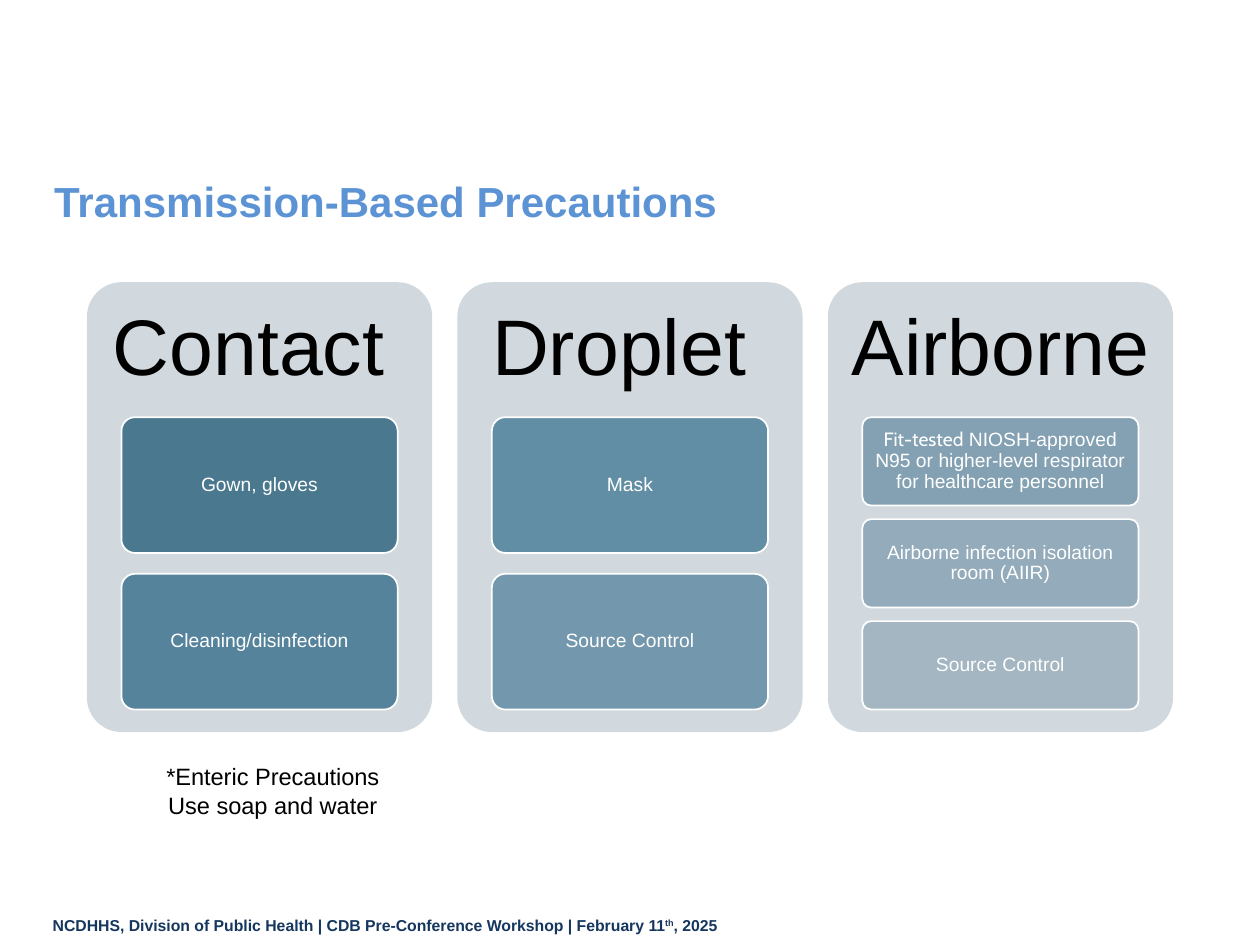
from dataclasses import dataclass

from pptx import Presentation
from pptx import util as u
from pptx.dml import color
from pptx.enum import shapes, text


@dataclass(frozen=True)
class Theme:
    font: str = "Arial"
    accent_font: str = "Cabin"
    title: str = "5C93D5"
    footer: str = "15365E"
    panel: str = "D1D9DE"
    dark: str = "000000"
    light: str = "FFFFFF"
    title_size: float = 24
    heading_size: float = 45
    card_size: float = 11
    note_size: float = 13.5
    footer_size: float = 9


THEME = Theme()

# Each column: heading, then cards as (fill, runs); a run is text or (text, format).
COLUMNS = [
    ("Contact ", [("4A788E", ["Gown, gloves"]),
                  ("55839B", ["Cleaning/disinfection"])]),
    ("Droplet ", [("628EA5", ["Mask"]),
                  ("7397AC", ["Source Control"])]),
    ("Airborne", [
        ("83A1B2", [("Fit-tested", {"font": THEME.accent_font}),
                    " NIOSH-approved N95 or higher-level respirator for healthcare personnel"]),
        ("93ABBA", ["Airborne infection isolation room (AIIR)"]),
        ("A3B6C1", ["Source Control"])]),
]


def rgb(value):
    return color.RGBColor.from_string(value)


def write_text(shape, paragraphs, *, size, ink, bold=False, align=text.PP_ALIGN.CENTER,
               anchor=text.MSO_ANCHOR.MIDDLE, spacing=None, insets=(0.1, 0.05)):
    """Fill a shape with paragraphs, each a list of runs."""
    frame = shape.text_frame
    frame.word_wrap = True
    frame.auto_size = text.MSO_AUTO_SIZE.NONE
    frame.vertical_anchor = anchor
    frame.margin_left = frame.margin_right = u.Inches(insets[0])
    frame.margin_top = frame.margin_bottom = u.Inches(insets[1])
    for index, runs in enumerate(paragraphs):
        paragraph = frame.add_paragraph() if index else frame.paragraphs[0]
        paragraph.alignment = align
        if spacing:
            paragraph.line_spacing = spacing
        for item in runs:
            words, style = (item, {}) if isinstance(item, str) else item
            run = paragraph.add_run()
            run.text = words
            run.font.name = style.get("font", THEME.font)
            run.font.size = u.Pt(size)
            run.font.bold = bold
            run.font.color.rgb = rgb(ink)
            if "baseline" in style:
                run.font._element.set("baseline", str(style["baseline"]))


def add_text_box(slide, box, paragraphs, **style):
    shape = slide.shapes.add_textbox(*map(u.Inches, box))
    write_text(shape, paragraphs, **style)


def add_rounded_box(slide, box, fill, line=None):
    shape = slide.shapes.add_shape(shapes.MSO_SHAPE.ROUNDED_RECTANGLE, *map(u.Inches, box))
    shape.adjustments[0] = 0.1
    shape.shadow.inherit = False
    shape.fill.solid()
    shape.fill.fore_color.rgb = rgb(fill)
    if line:
        shape.line.color.rgb = rgb(line)
        shape.line.width = u.Pt(1)
    else:
        shape.line.fill.background()
    return shape


def add_title(slide, box):
    title = slide.shapes.title
    title.left, title.top, title.width, title.height = map(u.Inches, box)
    write_text(title, [["Transmission-Based Precautions"]], size=THEME.title_size,
               ink=THEME.title, bold=True, align=text.PP_ALIGN.LEFT,
               anchor=text.MSO_ANCHOR.TOP, spacing=0.9)


def add_column(slide, box, heading, cards):
    """Draw a panel: heading in the top 30 %, cards stacked in the next 65 %."""
    left, top, width, height = box
    add_rounded_box(slide, box, THEME.panel)
    add_text_box(slide, (left, top, width, 0.3 * height), [[heading]],
                 size=THEME.heading_size, ink=THEME.dark, spacing=0.9, insets=(0.1, 0.19))

    gap_ratio = 2 / 13
    count = len(cards)
    card_height = 0.65 * height / (count + gap_ratio * (count - 1))
    for index, (fill, runs) in enumerate(cards):
        card_top = top + 0.3 * height + index * card_height * (1 + gap_ratio)
        card = add_rounded_box(slide, (left + 0.1 * width, card_top, 0.8 * width, card_height),
                               fill, THEME.light)
        write_text(card, [runs], size=THEME.card_size, ink=THEME.light, spacing=0.9,
                   insets=(0.03, 0.02))


def add_columns(slide, box, gap):
    left, top, width, height = box
    column_width = (width - gap * (len(COLUMNS) - 1)) / len(COLUMNS)
    for index, (heading, cards) in enumerate(COLUMNS):
        column_left = left + index * (column_width + gap)
        add_column(slide, (column_left, top, column_width, height), heading, cards)


def add_note(slide, box):
    add_text_box(slide, box, [["*Enteric Precautions"], ["Use soap and water"]],
                 size=THEME.note_size, ink=THEME.dark, anchor=text.MSO_ANCHOR.TOP,
                 insets=(0.07, 0.04))


def add_footer(slide, box):
    runs = ["NCDHHS, Division of Public Health | CDB Pre-Conference Workshop | February 11",
            ("th", {"baseline": 30000}), ", 2025"]
    add_text_box(slide, box, [runs], size=THEME.footer_size, ink=THEME.footer, bold=True,
                 align=text.PP_ALIGN.LEFT, anchor=text.MSO_ANCHOR.TOP)


def main():
    presentation = Presentation()
    presentation.slide_width = u.Inches(10)
    presentation.slide_height = u.Inches(7.5)
    slide = presentation.slides.add_slide(presentation.slide_layouts[5])
    add_footer(slide, (0.32, 7.22, 8.74, 0.29))
    add_title(slide, (0.33, 1.39, 9.37, 0.6))
    add_columns(slide, (0.69, 2.24, 8.62, 3.57), gap=0.2)
    add_note(slide, (1.19, 6.01, 1.95, 0.53))
    presentation.save("out.pptx")


if __name__ == "__main__":
    main()
